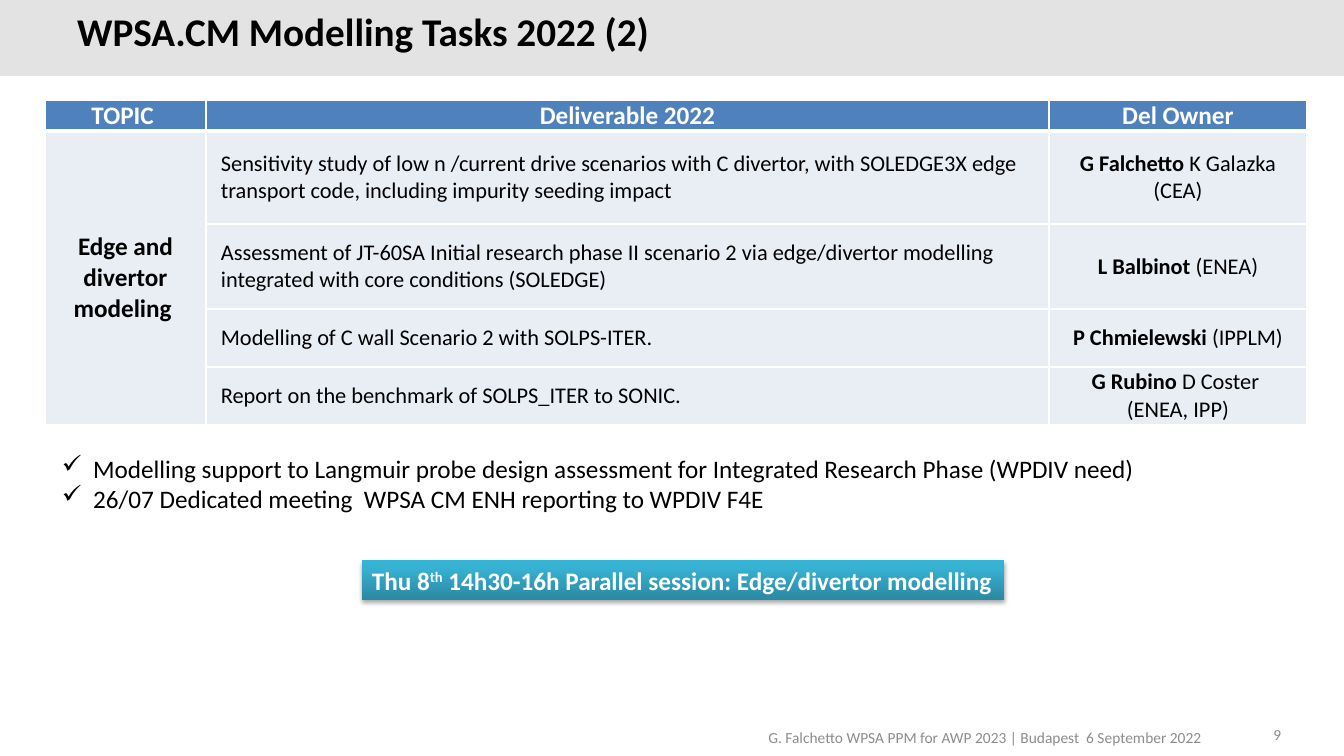
from lxml.etree import SubElement
from pptx import Presentation
from pptx.dml.color import RGBColor
from pptx.enum.shapes import MSO_SHAPE
from pptx.enum.text import MSO_ANCHOR, MSO_AUTO_SIZE, PP_ALIGN
from pptx.oxml import parse_xml
from pptx.oxml.ns import nsdecls, qn
from pptx.util import Emu, Inches, Pt

FONT = "Calibri"
COLORS = {
    "band": "E3E3E3",
    "header": "4F81BD",
    "body": "E9EDF4",
    "white": "FFFFFF",
    "black": "000000",
    "footer": "8C8C8C",
    "banner_dark": "2A88A2",
    "banner_mid": "37B1D2",
    "banner_light": "34B4D6",
}
COLUMN_WIDTHS = [161, 843, 258]
ROW_HEIGHTS = [31, 93, 85, 58, 58]
HEADINGS = ["TOPIC ", "Deliverable 2022", "Del Owner"]
TOPIC = "Edge and divertor modeling "
# Deliverable paragraphs, lead owner, rest of the owner paragraphs
DELIVERABLES = [
    (["Sensitivity study of low n /current drive scenarios with C divertor, with SOLEDGE3X edge ",
      "transport code, including impurity seeding impact"],
     "G Falchetto ", ["K Galazka", "(CEA)"]),
    (["Assessment of JT-60SA Initial research phase II scenario 2 via edge/divertor modelling "
      "integrated with core conditions (SOLEDGE)"],
     "L Balbinot ", ["(ENEA)"]),
    (["Modelling of C wall Scenario 2 with SOLPS-ITER."],
     "P Chmielewski ", ["(IPPLM)"]),
    (["Report on the benchmark of SOLPS_ITER to SONIC."],
     "G Rubino ", ["D Coster ", "(ENEA, IPP)"]),
]
NOTES = [
    "Modelling support to Langmuir probe design assessment for Integrated Research Phase (WPDIV need)",
    "26/07 Dedicated meeting  WPSA CM ENH reporting to WPDIV F4E",
]


def px(length):
    return Emu(round(length * 914400 / 100.8))


def box(*lengths):
    return [px(length) for length in lengths]


def rgb(color):
    return RGBColor.from_string(COLORS[color])


def style(run, size, color="black", bold=False):
    run.font.name = FONT
    run.font.size = Pt(size)
    run.font.bold = bold
    run.font.color.rgb = rgb(color)


def write(frame, paragraphs, size, color="black", bold=False, align=PP_ALIGN.LEFT):
    """Fill a text frame; each paragraph is a string."""
    frame.text = "\n".join(paragraphs)
    for paragraph in frame.paragraphs:
        paragraph.alignment = align
        for run in paragraph.runs:
            style(run, size, color, bold)


def add_band(slide):
    band = slide.shapes.add_shape(MSO_SHAPE.RECTANGLE, *box(0, 0, 1344, 76))
    band.shadow.inherit = False
    band.fill.solid()
    band.fill.fore_color.rgb = rgb("band")
    band.line.fill.background()
    slide.shapes._spTree.insert(2, band._element)


def add_title(slide, wording):
    title = slide.shapes.title
    title.left, title.top, title.width, title.height = box(67, 13, 1109, 50)
    frame = title.text_frame
    write(frame, [wording], 28, bold=True)
    frame.auto_size = MSO_AUTO_SIZE.NONE
    frame.vertical_anchor = MSO_ANCHOR.MIDDLE
    frame.paragraphs[0].line_spacing = Pt(24)


def add_text(slide, place, paragraphs, size, color="black", align=PP_ALIGN.LEFT):
    frame = slide.shapes.add_textbox(*box(*place)).text_frame
    frame.word_wrap = True
    write(frame, paragraphs, size, color, align=align)
    return frame


def add_checklist(slide, place, items):
    frame = add_text(slide, place, items, 18)
    indent = Inches(0.31)
    for paragraph in frame.paragraphs:
        properties = paragraph._p.get_or_add_pPr()
        properties.set("marL", str(indent))
        properties.set("indent", str(-indent))
        SubElement(properties, qn("a:buChar")).set("char", "✓")


def format_cell(cell, row, margin_x, margin_y):
    cell.margin_left = cell.margin_right = px(margin_x)
    cell.margin_top = cell.margin_bottom = px(margin_y)
    cell.vertical_anchor = MSO_ANCHOR.MIDDLE
    widths = {"L": 1, "R": 1, "T": 3 if row == 1 else 1, "B": 3 if row == 0 else 1}
    for side, width in widths.items():
        cell._tc.get_or_add_tcPr().append(parse_xml(
            f'<a:ln{side} {nsdecls("a")} w="{Pt(width)}"><a:solidFill>'
            f'<a:srgbClr val="{COLORS["white"]}"/></a:solidFill></a:ln{side}>'))
    cell.fill.solid()
    cell.fill.fore_color.rgb = rgb("body" if row else "header")


def add_deliverables(slide):
    table = slide.shapes.add_table(
        len(ROW_HEIGHTS), len(COLUMN_WIDTHS),
        *box(45, 100, sum(COLUMN_WIDTHS), sum(ROW_HEIGHTS))).table
    table.horz_banding = False
    for column, width in zip(table.columns, COLUMN_WIDTHS):
        column.width = px(width)
    for row, height in zip(table.rows, ROW_HEIGHTS):
        row.height = px(height)
    for row in range(len(ROW_HEIGHTS)):
        for column in range(len(COLUMN_WIDTHS)):
            margin = 15 if row and column == 1 else 0
            format_cell(table.cell(row, column), row, margin, margin)

    for column, heading in enumerate(HEADINGS):
        write(table.cell(0, column).text_frame, [heading], 18, "white", True, PP_ALIGN.CENTER)
    table.cell(1, 0).merge(table.cell(len(DELIVERABLES), 0))
    write(table.cell(1, 0).text_frame, [TOPIC], 18, bold=True, align=PP_ALIGN.CENTER)
    for row, (deliverable, lead, others) in enumerate(DELIVERABLES, 1):
        write(table.cell(row, 1).text_frame, deliverable, 16)
        owners = table.cell(row, 2).text_frame
        write(owners, [lead, *others[1:]], 16, align=PP_ALIGN.CENTER)
        owners.paragraphs[0].runs[0].font.bold = True
        partner = owners.paragraphs[0].add_run()
        partner.text = others[0]
        style(partner, 16)


def add_banner(slide, place, pieces):
    """Add a shaded bar; pieces are (wording, baseline shift in percent)."""
    banner = slide.shapes.add_shape(MSO_SHAPE.RECTANGLE, *box(*place))
    banner.line.fill.background()
    stops = [(0, "banner_dark"), (80, "banner_mid"), (100, "banner_light")]
    stop_list = "".join(
        f'<a:gs pos="{position * 1000}"><a:srgbClr val="{COLORS[color]}"/></a:gs>'
        for position, color in stops)
    outline = banner._element.spPr.find(qn("a:ln"))
    outline.addprevious(parse_xml(
        f'<a:gradFill {nsdecls("a")} rotWithShape="1"><a:gsLst>{stop_list}</a:gsLst>'
        '<a:lin ang="16200000" scaled="0"/></a:gradFill>'))
    outline.addnext(parse_xml(
        f'<a:effectLst {nsdecls("a")}><a:outerShdw blurRad="{Pt(3.1)}" dist="{Pt(1.8)}" '
        f'dir="5400000" rotWithShape="0"><a:srgbClr val="{COLORS["black"]}">'
        '<a:alpha val="35000"/></a:srgbClr></a:outerShdw></a:effectLst>'))
    frame = banner.text_frame
    frame.word_wrap = False
    frame.vertical_anchor = MSO_ANCHOR.TOP
    paragraph = frame.paragraphs[0]
    paragraph.alignment = PP_ALIGN.LEFT
    for wording, shift in pieces:
        run = paragraph.add_run()
        run.text = wording
        style(run, 18, "white", True)
        if shift:
            run._r.get_or_add_rPr().set("baseline", str(shift * 1000))


def main():
    deck = Presentation()
    deck.slide_width, deck.slide_height = box(1344, 756)
    slide = deck.slides.add_slide(deck.slide_layouts[5])
    add_band(slide)
    add_title(slide, "WPSA.CM Modelling Tasks 2022 (2)")
    add_text(slide, (647, 723, 565, 36),
             ["G. Falchetto WPSA PPM for AWP 2023 | Budapest  6 September 2022"],
             11, "footer", PP_ALIGN.RIGHT)
    add_text(slide, (1212, 720, 79, 22), ["9"], 11, "footer", PP_ALIGN.RIGHT)
    add_deliverables(slide)
    add_checklist(slide, (52, 448, 1104, 71), NOTES)
    add_banner(slide, (362, 560, 642, 40),
               [("Thu 8", 0), ("th", 30),
                (" 14h30-16h Parallel session: Edge/divertor modelling", 0)])
    deck.save("out.pptx")


if __name__ == "__main__":
    main()
